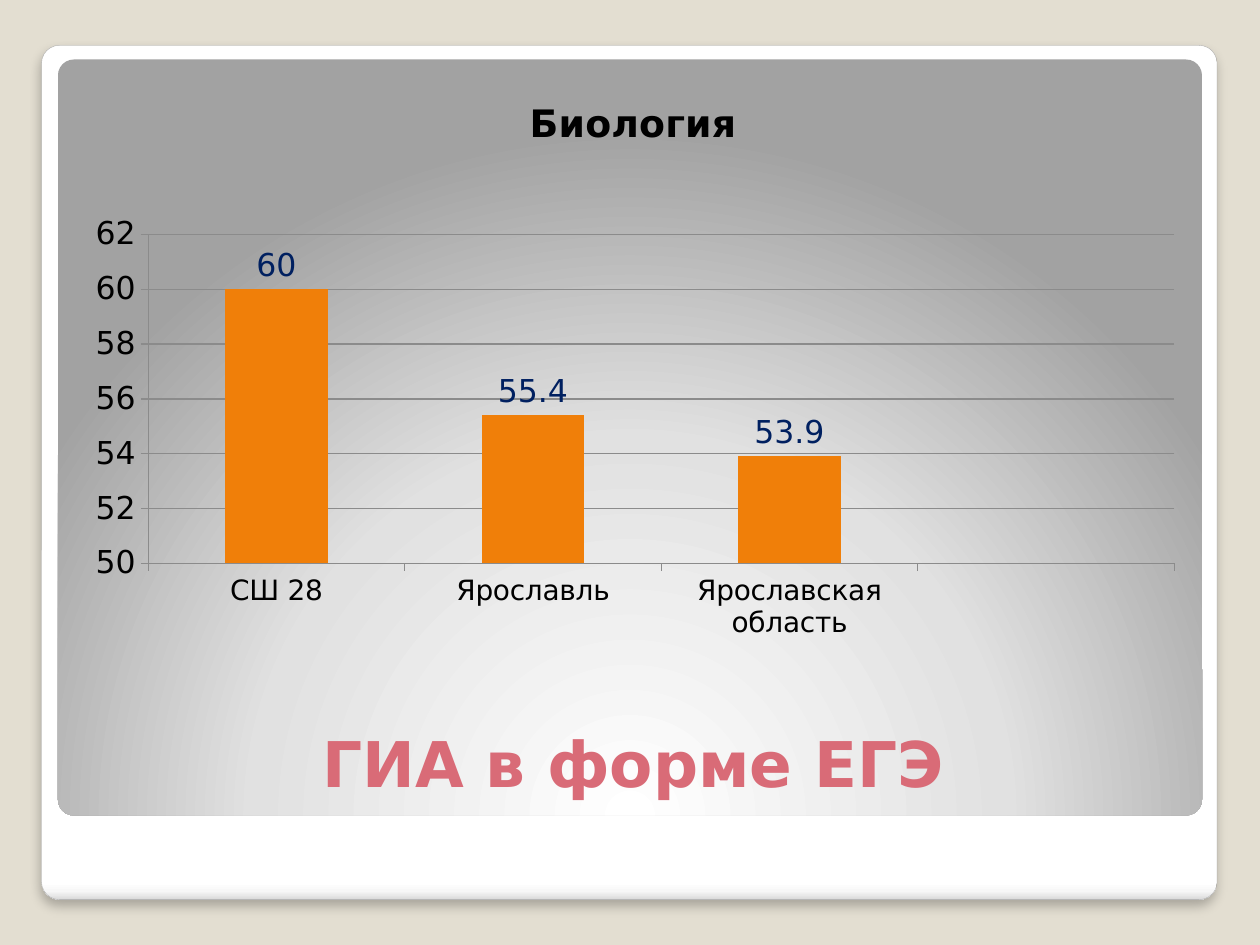
import pptx
import pptx.chart.data
import pptx.dml.color
import pptx.enum.chart
import pptx.enum.shapes
import pptx.enum.text
import pptx.oxml
import pptx.oxml.ns
import pptx.util

RGB = pptx.dml.color.RGBColor
SAND = RGB(0xE3, 0xDE, 0xD1)
EDGE = RGB(0xA4, 0xA4, 0xA4)
GREY = RGB(0x8B, 0x8B, 0x8B)
BLACK = RGB(0, 0, 0)
ORANGE = RGB(0xF0, 0x7F, 0x09)
NAVY = RGB(0x00, 0x20, 0x60)
ROSE = RGB(0xD9, 0x6B, 0x77)
WHITE = RGB(0xFF, 0xFF, 0xFF)

FACE = ((0, WHITE), (98, WHITE), (99, RGB(0xF7, 0xF7, 0xF7)), (100, RGB(0xDA, 0xDA, 0xDA)))
GLOW = ((0, WHITE), (55, RGB(0xE1, 0xE1, 0xE1)), (100, RGB(0xA2, 0xA2, 0xA2)))
DOWN = '<a:lin ang="5400000" scaled="0"/>'
ROUND = ('<a:path path="circle"><a:fillToRect l="50000" t="175000" '
         'r="50000" b="-75000"/></a:path>')
SHADE = ('<a:effectLst {ns}><a:outerShdw blurRad="76200" dist="50800" dir="5400000" '
         'rotWithShape="0"><a:srgbClr val="000000"><a:alpha val="25000"/></a:srgbClr>'
         '</a:outerShdw></a:effectLst>')
NS = pptx.oxml.ns.nsdecls("a")


class Deck:
    font = "DejaVu Sans"

    def __init__(self, wide, high):
        self.file = pptx.Presentation()
        self.file.slide_width = pptx.util.Inches(wide)
        self.file.slide_height = pptx.util.Inches(high)
        self.slide = self.file.slides.add_slide(self.file.slide_layouts[5])
        fill = self.slide.background.fill
        fill.solid()
        fill.fore_color.rgb = SAND

    def box(self, x, y, w, h):
        """Turn shares of the slide's size into lengths."""
        wide, high = self.file.slide_width, self.file.slide_height
        return [round(v) for v in (x * wide, y * high, w * wide, h * high)]

    def style(self, font, size, color, bold=False):
        font.name, font.bold = self.font, bold
        font.size = pptx.util.Pt(size)
        font.color.rgb = color

    def card(self, area, stops, course, edge=False):
        kind = pptx.enum.shapes.MSO_SHAPE.ROUNDED_RECTANGLE
        card = self.slide.shapes.add_shape(kind, *self.box(*area))
        card.adjustments[0] = 0.021
        card.shadow.inherit = False
        if edge:
            card.line.color.rgb = EDGE
            card.line.width = pptx.util.Pt(0.16)
        else:
            card.line.fill.background()
        marks = "".join(f'<a:gs pos="{at * 1000}"><a:srgbClr val="{color}"/></a:gs>'
                        for at, color in stops)
        fill = f'<a:gradFill {NS} rotWithShape="1"><a:gsLst>{marks}</a:gsLst>{course}</a:gradFill>'
        props = card._element.spPr
        props.find(pptx.oxml.ns.qn("a:prstGeom")).addnext(pptx.oxml.parse_xml(fill))
        if edge:
            flat = props.find(pptx.oxml.ns.qn("a:effectLst"))
            props.replace(flat, pptx.oxml.parse_xml(SHADE.format(ns=NS)))

    def title(self, area, text):
        head = self.slide.shapes.title
        head.left, head.top, head.width, head.height = self.box(*area)
        frame = head.text_frame
        frame.text = text
        frame.vertical_anchor = pptx.enum.text.MSO_ANCHOR.BOTTOM
        line = frame.paragraphs[0]
        line.alignment = pptx.enum.text.PP_ALIGN.CENTER
        self.style(line.font, 36, ROSE, True)
        # Bring the title in front of the cards
        self.slide.shapes._spTree.append(head._element)

    def chart(self, area, name, cats, vals, plot):
        data = pptx.chart.data.CategoryChartData()
        data.categories = cats
        data.add_series("Series 1", vals)
        kind = pptx.enum.chart.XL_CHART_TYPE.COLUMN_CLUSTERED
        chart = self.slide.shapes.add_chart(kind, *self.box(*area), data).chart
        chart.has_legend = False
        self.style(chart.font, 18, BLACK)
        chart.has_title = True
        chart.chart_title.include_in_layout = False
        line = chart.chart_title.text_frame.paragraphs[0]
        line.text = name
        self.style(line.font, 21.6, BLACK, True)

        for axis, size in ((chart.category_axis, 16), (chart.value_axis, 18)):
            self.style(axis.tick_labels.font, size, BLACK)
            axis.major_tick_mark = pptx.enum.chart.XL_TICK_MARK.OUTSIDE
            axis.format.line.color.rgb = GREY
        axis = chart.value_axis
        axis.minimum_scale, axis.maximum_scale, axis.major_unit = 50, 62, 2
        axis.major_gridlines.format.line.color.rgb = GREY

        bars = chart.plots[0]
        bars.gap_width = 150
        bars.vary_by_categories = False
        fill = bars.series[0].format.fill
        fill.solid()
        fill.fore_color.rgb = ORANGE
        bars.has_data_labels = True
        tags = bars.data_labels
        tags.show_value = True
        tags.position = pptx.enum.chart.XL_LABEL_POSITION.OUTSIDE_END
        self.style(tags.font, 18, NAVY)
        self.place(chart, plot)

    def place(self, chart, plot):
        """Fix the inner plot area at shares of the chart's size."""
        sizes = "".join(f'<c:{key} val="{share}"/>' for key, share in zip("xywh", plot))
        xml = (f'<c:layout {pptx.oxml.ns.nsdecls("c")}><c:manualLayout>'
               '<c:layoutTarget val="inner"/><c:xMode val="edge"/><c:yMode val="edge"/>'
               f'{sizes}</c:manualLayout></c:layout>')
        room = chart._chartSpace.chart.plotArea
        for old in room.findall(pptx.oxml.ns.qn("c:layout")):
            room.remove(old)
        room.insert(0, pptx.oxml.parse_xml(xml))


def main():
    deck = Deck(10, 7.5)
    deck.card((0.033, 0.048, 0.933, 0.904), FACE, DOWN, edge=True)
    deck.card((0.046, 0.063, 0.908, 0.8), GLOW, ROUND)
    deck.title((0.055, 0.697, 0.895, 0.156), "ГИА в форме ЕГЭ")
    deck.chart((0.055, 0.077, 0.895, 0.611), "Биология",
               ("СШ 28", "Ярославль", "Ярославская область", ""),
               (60, 55.4, 53.9, None), (0.07, 0.28, 0.91, 0.57))
    deck.file.save("out.pptx")


if __name__ == "__main__":
    main()
